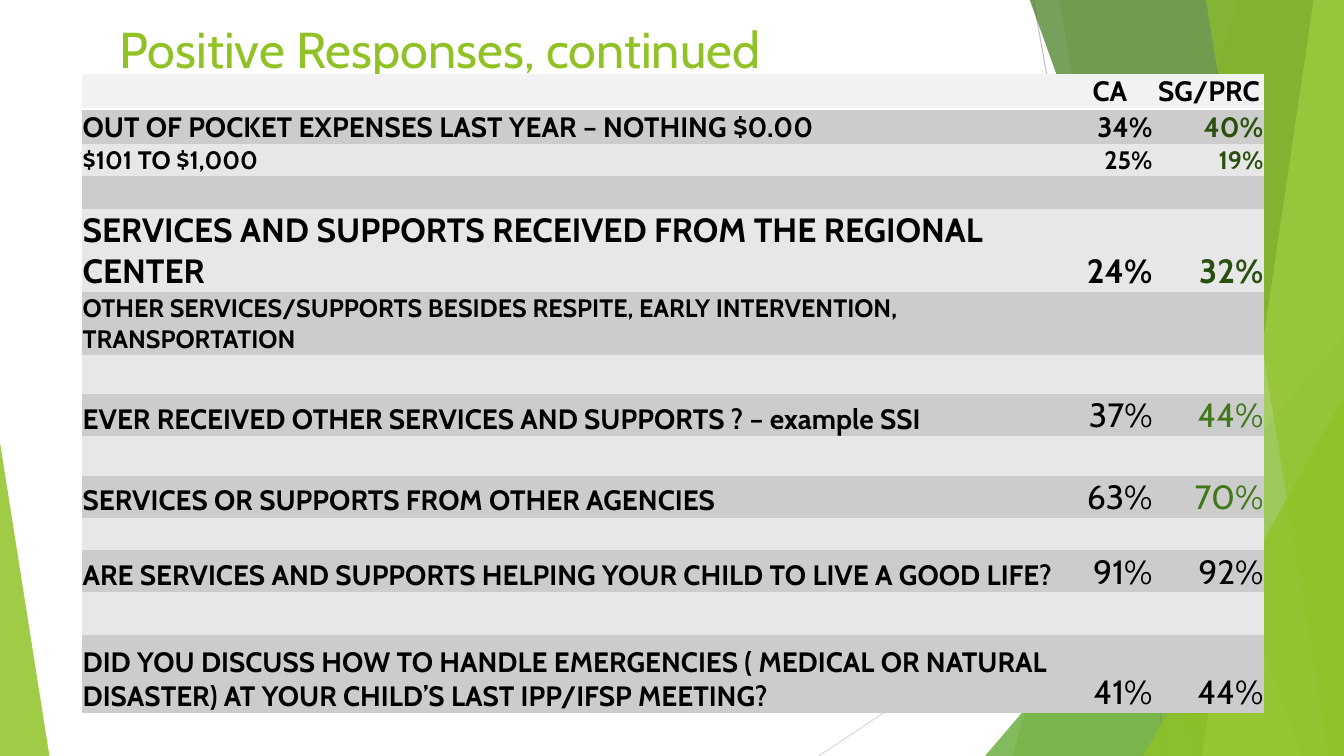
from dataclasses import dataclass
from typing import Any

from lxml.etree import SubElement as Sub
from pptx import Presentation
from pptx.dml.color import RGBColor as Rgb
from pptx.enum.shapes import MSO_CONNECTOR as Link, MSO_SHAPE as Kind
from pptx.enum.text import MSO_ANCHOR as Anchor, PP_ALIGN as Align
from pptx.oxml.ns import qn
from pptx.util import Inches, Pt

WIDE, HIGH = 13.33, 7.5
FONT = "Cabin"
BLACK, LIME, DARK, GREEN = "000000", "90C226", "2A5010", "3F7819"
PLAIN = "{2D5ABB26-0587-4C30-8999-92F81FD0307C}"


@dataclass
class Ray:
    start: tuple[float, float]
    end: tuple[float, float]
    color: str


@dataclass
class Band:
    top: float
    base: float
    color: str
    alpha: int


@dataclass
class Wedge:
    box: tuple[float, float, float, float]
    peak: float
    color: str
    alpha: int


@dataclass
class Row:
    height: float
    label: str = ""
    size: int = 20
    state: str = ""
    local: str = ""
    rate: int = 24
    bold: bool = False
    tint: str = BLACK


RAYS = [
    Ray((10.25, 0), (11.58, HIGH), "BFBFBF"),
    Ray((WIDE, 4.03), (8.12, HIGH), "D9D9D9"),
]
SHADES = [
    Band(12.28, 10.04, LIME, 30),
    Band(10.5, 11.83, LIME, 20),
    Wedge((9.77, 3.33, 3.56, 4.17), 1, "54A021", 72),
    Band(10.21, 12.91, GREEN, 70),
    Band(13.03, 11.92, "C0E474", 70),
    Band(11.96, 13.18, LIME, 65),
    Wedge((11.34, 3.93, 1.99, 3.57), 1, LIME, 80),
    Wedge((0, 4.39, 0.49, 3.11), 0, LIME, 85),
]
COLS = [9.83, 0.8, 1.1]
ROWS = [
    Row(0.35, "", 20, "CA ", "SG/PRC", 20, True),
    Row(0.35, "OUT OF POCKET EXPENSES LAST YEAR – NOTHING $0.00", 20,
        "34%", "40%", 20, True, DARK),
    Row(0.32, "$101 TO $1,000", 18, "25%", "19%", 18, True, DARK),
    Row(0.32),
    Row(0.83, "SERVICES AND SUPPORTS RECEIVED FROM THE REGIONAL CENTER", 24,
        "24%", "32%", 24, True, DARK),
    Row(0.62, "OTHER SERVICES/SUPPORTS BESIDES RESPITE, EARLY INTERVENTION, "
        "TRANSPORTATION", 18),
    Row(0.39),
    Row(0.42, "EVER RECEIVED OTHER SERVICES AND SUPPORTS ? – example SSI", 20,
        "37%", "44%", tint=GREEN),
    Row(0.39),
    Row(0.42, "SERVICES OR SUPPORTS FROM OTHER AGENCIES", 20,
        "63%", "70%", tint=GREEN),
    Row(0.32),
    Row(0.42, "ARE SERVICES AND SUPPORTS HELPING YOUR CHILD TO LIVE A GOOD LIFE?",
        20, "91%", "92%"),
    Row(0.42),
    Row(0.78, "DID YOU DISCUSS HOW TO HANDLE EMERGENCIES ( MEDICAL OR NATURAL "
        "DISASTER) AT YOUR CHILD’S LAST IPP/IFSP MEETING?", 20, "41%", "44%"),
]


def paint(form: Any, color: str) -> None:
    form.rgb = Rgb.from_string(color)


def apply(item: Any, style: dict[str, Any]) -> None:
    for name, value in style.items():
        setattr(item, name, value)


def write(para: Any, text: str, size: int, bold: bool, color: str) -> None:
    run = para.add_run()
    run.text = text
    apply(run.font, {"name": FONT, "size": Pt(size), "bold": bold})
    paint(run.font.color, color)


def draw_ray(shapes: Any, ray: Ray) -> None:
    ends = [Inches(n) for n in ray.start + ray.end]
    line = shapes.add_connector(Link.STRAIGHT, *ends)
    line.line.width = Pt(0.75)
    paint(line.line.color, ray.color)
    Sub(line._element.spPr, qn("a:effectLst"))


def draw_shade(shapes: Any, shade: Band | Wedge) -> None:
    if isinstance(shade, Band):
        spots = [(shade.top, -0.01), (WIDE, -0.01), (WIDE, HIGH), (shade.base, HIGH)]
        first, *rest = [(Inches(x), Inches(y)) for x, y in spots]
        pen = shapes.build_freeform(*first)
        pen.add_line_segments(rest)
        shape = pen.convert_to_shape()
    else:
        shape = shapes.add_shape(Kind.ISOSCELES_TRIANGLE, *map(Inches, shade.box))
        shape.adjustments[0] = shade.peak
    shape.shadow.inherit = False
    shape.line.fill.background()
    shape.fill.solid()
    paint(shape.fill.fore_color, shade.color)
    tone = shape._element.spPr.find(f"{qn('a:solidFill')}/{qn('a:srgbClr')}")
    Sub(tone, qn("a:alpha"), val=str(shade.alpha * 1000))


def draw_title(shapes: Any) -> None:
    box = shapes.add_textbox(*map(Inches, (1.09, 0.13, 11.15, 1.2)))
    apply(box.text_frame, {"word_wrap": True, "vertical_anchor": Anchor.TOP})
    write(box.text_frame.paragraphs[0], "Positive Responses, continued", 36, False, LIME)


def underline(cell: Any) -> None:
    edge = Sub(cell._tc.get_or_add_tcPr(), qn("a:lnB"), w=str(Pt(2)))
    fill = Sub(edge, qn("a:solidFill"))
    Sub(fill, qn("a:srgbClr"), val="FFFFFF")


def draw_row(table: Any, index: int, row: Row) -> None:
    head = index == 0
    back = "F2F2F2" if head else "CCCCCC" if index % 2 else "E7E7E7"
    side = Align.CENTER if head else Align.RIGHT
    pad = Inches(0.01)
    style = {"margin_left": pad, "margin_right": pad, "margin_top": pad,
             "margin_bottom": 0,
             "vertical_anchor": Anchor.MIDDLE if head else Anchor.BOTTOM}
    parts = [
        (row.label, row.size, True, BLACK, Align.LEFT),
        (row.state, row.rate, row.bold, BLACK, side),
        (row.local, row.rate, row.bold, row.tint, side),
    ]
    table.rows[index].height = Inches(row.height)
    for col, (text, size, bold, color, align) in enumerate(parts):
        cell = table.cell(index, col)
        apply(cell, style)
        if head:
            underline(cell)
        cell.fill.solid()
        paint(cell.fill.fore_color, back)
        para = cell.text_frame.paragraphs[0]
        para.alignment = align
        if text:
            write(para, text, size, bold, color)
        else:
            Sub(para._p, qn("a:endParaRPr"), sz="1200")


def draw_table(shapes: Any) -> None:
    frame = shapes.add_table(len(ROWS), len(COLS),
                             *map(Inches, (0.81, 0.73, 11.73, 6.34)))
    table = frame.table
    apply(table, {"first_row": False, "horz_banding": False})
    table._tbl.tblPr.find(qn("a:tableStyleId")).text = PLAIN
    for col, width in zip(table.columns, COLS):
        col.width = Inches(width)
    for index, row in enumerate(ROWS):
        draw_row(table, index, row)


def main() -> None:
    deck = Presentation()
    apply(deck, {"slide_width": Inches(WIDE), "slide_height": Inches(HIGH)})
    shapes = deck.slides.add_slide(deck.slide_layouts[6]).shapes
    for ray in RAYS:
        draw_ray(shapes, ray)
    for shade in SHADES:
        draw_shade(shapes, shade)
    draw_title(shapes)
    draw_table(shapes)
    deck.save("out.pptx")


if __name__ == "__main__":
    main()
